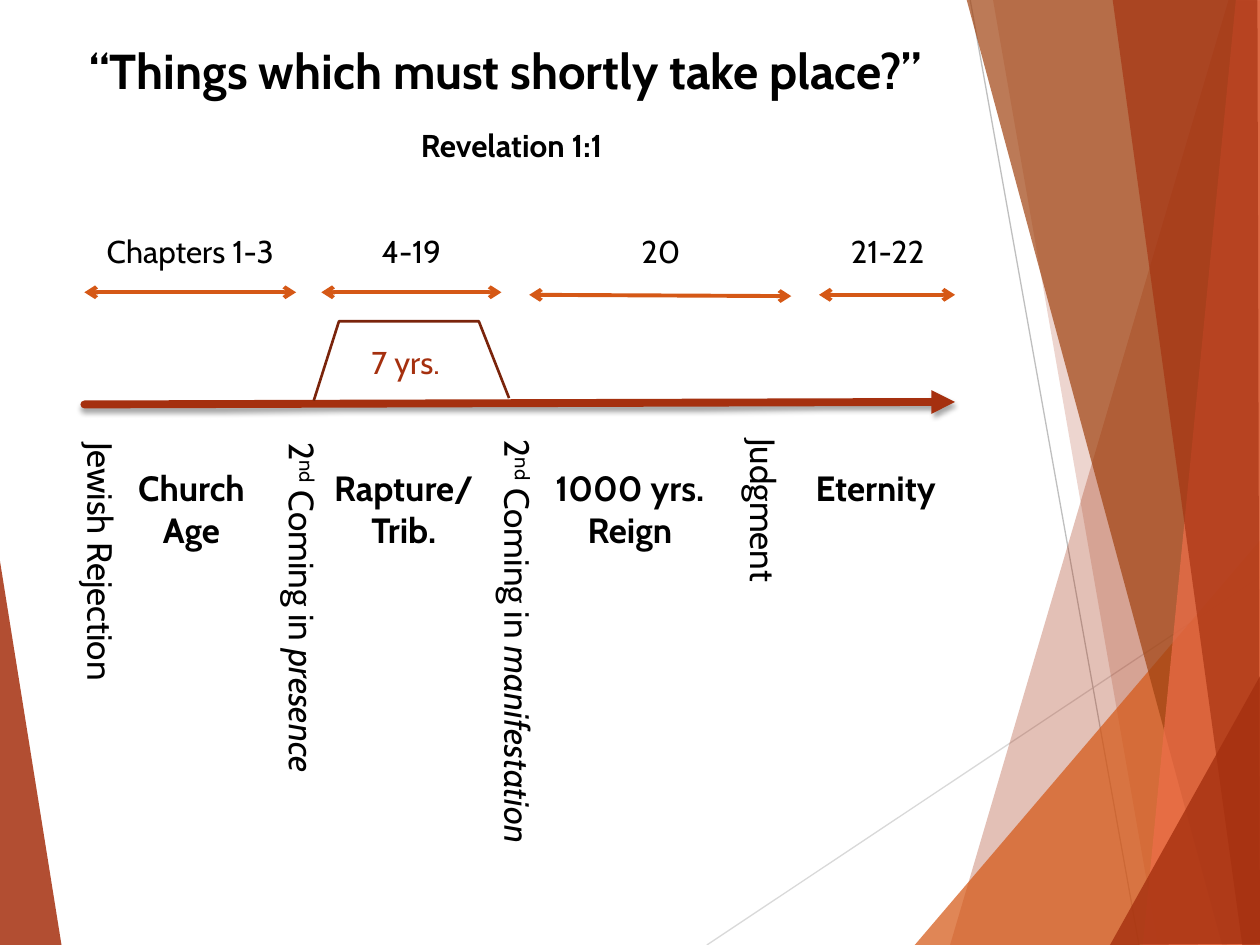
from lxml.etree import SubElement
from pptx import Presentation
from pptx.dml.color import RGBColor
from pptx.enum.shapes import MSO_CONNECTOR as Connector
from pptx.enum.text import MSO_AUTO_SIZE as AutoSize, PP_ALIGN as Align
from pptx.oxml.ns import qn
from pptx.util import Inches, Pt

BLACK = RGBColor(0x00, 0x00, 0x00)
RUST = RGBColor(0xA5, 0x30, 0x0F)
ORANGE = RGBColor(0xD5, 0x58, 0x16)
BROWN = RGBColor(0xA0, 0x42, 0x10)
CORAL = RGBColor(0xEE, 0x6E, 0x4A)
DARK_RUST = RGBColor(0x7A, 0x24, 0x0B)
LIGHT_GREY = RGBColor(0xD9, 0xD9, 0xD9)
GREY = RGBColor(0xBF, 0xBF, 0xBF)

FONT = "Cabin"
BOLD = {"bold": True}
ITALIC = {"italic": True}
RAISED = {"baseline": 30}

# Translucent decoration: colour, opacity in percent, corner points
LEFT_WEDGE = (RUST, 85, [(-0.01, 4.39), (0.49, 7.51), (-0.01, 7.5)])
RIGHT_FACETS = [
    (RUST, 30, [(9.75, 0), (7.54, 7.5), (10.02, 7.51), (10.01, 0.01)]),
    (RUST, 20, [(7.88, -0.01), (9.19, 7.5), (10.01, 7.5), (10.01, -0.01)]),
    (ORANGE, 72, [(7.26, 7.5), (10, 4.29), (10.01, 7.5)]),
    (BROWN, 70, [(7.67, -0.01), (9.7, 7.5), (10.01, 7.49), (10.01, -0.01)]),
    (CORAL, 70, [(9.81, -0.01), (9.07, 7.5), (10.01, 7.5), (10, -0.01)]),
    (RUST, 65, [(8.83, -0.01), (9.86, 7.5), (10, 7.5), (9.98, -0.01)]),
    (RUST, 80, [(8.81, 7.5), (10.01, 5.35), (10.01, 7.49)]),
]

# Chapter spans: label, label left and width, arrow start and end
CHAPTERS = [
    ("Chapters 1-3", 0.69, 1.64, (0.67, 2.32), (2.35, 2.32)),
    ("4-19", 2.92, 0.69, (2.55, 2.32), (3.98, 2.32)),
    ("20", 4.99, 0.51, (4.2, 2.34), (6.28, 2.35)),
    ("21-22", 6.63, 0.83, (6.5, 2.34), (7.58, 2.34)),
]

# Periods below the timeline: left, width, height, paragraphs
PERIODS = [
    (0.95, 1.14, 0.77, ["Church\nAge"]),
    (2.53, 1.35, 0.77, ["Rapture/\nTrib."]),
    (4.28, 1.44, 0.77, ["1000 yrs.", "Reign"]),
    (6.32, 1.26, 0.44, ["Eternity"]),
]

# Vertical events: left, top, height, spans
SECOND_COMING = [("2", {}), ("nd", RAISED), (" Coming in ", {})]
EVENTS = [
    (0.48, 3.41, 2.22, [("Jewish Rejection", {})]),
    (2.08, 3.41, 2.99, SECOND_COMING + [("presence", ITALIC)]),
    (3.79, 3.39, 3.63, SECOND_COMING + [("manifestation", ITALIC)]),
    (5.74, 3.38, 1.33, [("Judgment", {})]),
]


def add_outline(page, points, close):
    corners = [(Inches(x), Inches(y)) for x, y in points]
    builder = page.shapes.build_freeform(*corners[0])
    builder.add_line_segments(corners[1:], close=close)
    shape = builder.convert_to_shape()
    shape.shadow.inherit = False
    return shape


def add_facet(page, color, opacity, points):
    shape = add_outline(page, points, close=True)
    shape.fill.solid()
    shape.fill.fore_color.rgb = color
    shape.line.fill.background()
    tint = shape._element.spPr.find(f"{qn('a:solidFill')}/{qn('a:srgbClr')}")
    SubElement(tint, qn("a:alpha"), val=str(opacity * 1000))


def add_line(page, start, end, color, width, head=None, tail=None):
    """Draw a line and return its empty effect list."""
    ends = [Inches(value) for value in (*start, *end)]
    connector = page.shapes.add_connector(Connector.STRAIGHT, *ends)
    connector.line.color.rgb = color
    connector.line.width = Pt(width)
    stroke = connector.line._get_or_add_ln()
    if tail:
        stroke.set("cap", "rnd")
    for tag, kind in (("a:headEnd", head), ("a:tailEnd", tail)):
        if kind:
            SubElement(stroke, qn(tag), type=kind)
    return SubElement(connector._element.spPr, qn("a:effectLst"))


def add_shadow(effects):
    shadow = SubElement(effects, qn("a:outerShdw"), blurRad=str(Pt(3)),
                        dist=str(Pt(2)), dir="5400000", rotWithShape="0")
    tint = SubElement(shadow, qn("a:srgbClr"), val=str(BLACK))
    SubElement(tint, qn("a:alpha"), val="35000")


def add_span(para, text, size, color, style):
    span = para.add_run()
    span.text = text
    span.font.color.rgb = color
    values = {"name": FONT, "size": Pt(size), **style}
    baseline = values.pop("baseline", None)
    for name, value in values.items():
        setattr(span.font, name, value)
    if baseline:
        span._r.get_or_add_rPr().set("baseline", str(baseline * 1000))


def add_text(page, place, paragraphs, size, color=BLACK, align=Align.CENTER,
             vertical=False):
    """Each paragraph is a list of (text, style) spans."""
    box = page.shapes.add_textbox(*[Inches(value) for value in place])
    frame = box.text_frame
    frame.word_wrap = False
    frame.auto_size = AutoSize.SHAPE_TO_FIT_TEXT
    if vertical:
        frame._txBody.bodyPr.set("vert", "vert")
    for index, spans in enumerate(paragraphs):
        para = frame.add_paragraph() if index else frame.paragraphs[0]
        para.alignment = align
        for text, style in spans:
            for row, part in enumerate(text.split("\n")):
                if row:
                    para.add_line_break()
                add_span(para, part, size, color, style)


def add_decoration(page):
    add_facet(page, *LEFT_WEDGE)
    add_line(page, (5.61, 7.5), (10.01, 4.57), LIGHT_GREY, 0.75)
    add_line(page, (7.7, 0), (9.04, 7.5), GREY, 0.75)
    for facet in RIGHT_FACETS:
        add_facet(page, *facet)


def add_timeline(page):
    effects = add_line(page, (0.67, 3.21), (7.58, 3.19), RUST, 4.5,
                       tail="triangle")
    add_shadow(effects)
    for left, width, height, lines in PERIODS:
        add_text(page, (left, 3.65, width, height),
                 [[(line, BOLD)] for line in lines], 20)
    for left, top, height, spans in EVENTS:
        add_text(page, (left, top, 0.54, height), [spans], 20,
                 align=Align.LEFT, vertical=True)


def add_tribulation(page):
    arch = [(2.49, 3.18), (2.69, 2.55), (3.8, 2.55), (4.04, 3.16)]
    shape = add_outline(page, arch, close=False)
    shape.fill.background()
    shape.line.color.rgb = DARK_RUST
    shape.line.width = Pt(1.5)
    add_text(page, (2.85, 2.67, 0.83, 0.4), [[("7 yrs.", {})]], 18, RUST,
             Align.LEFT)


def add_chapters(page):
    for label, left, width, start, end in CHAPTERS:
        add_line(page, start, end, ORANGE, 2.25, "arrow", "arrow")
        add_text(page, (left, 1.79, width, 0.4), [[(label, {})]], 18)


def main():
    deck = Presentation()
    deck.slide_width, deck.slide_height = Inches(10), Inches(7.5)
    page = deck.slides.add_slide(deck.slide_layouts[6])
    add_decoration(page)
    add_timeline(page)
    add_tribulation(page)
    add_chapters(page)
    # Headings
    add_text(page, (0.17, 0.27, 7.77, 0.57),
             [[("“Things which must shortly take place?” ", BOLD)]], 28)
    add_text(page, (3.1, 0.95, 1.92, 0.4), [[("Revelation 1:1", BOLD)]], 18)
    deck.save("out.pptx")


if __name__ == "__main__":
    main()
